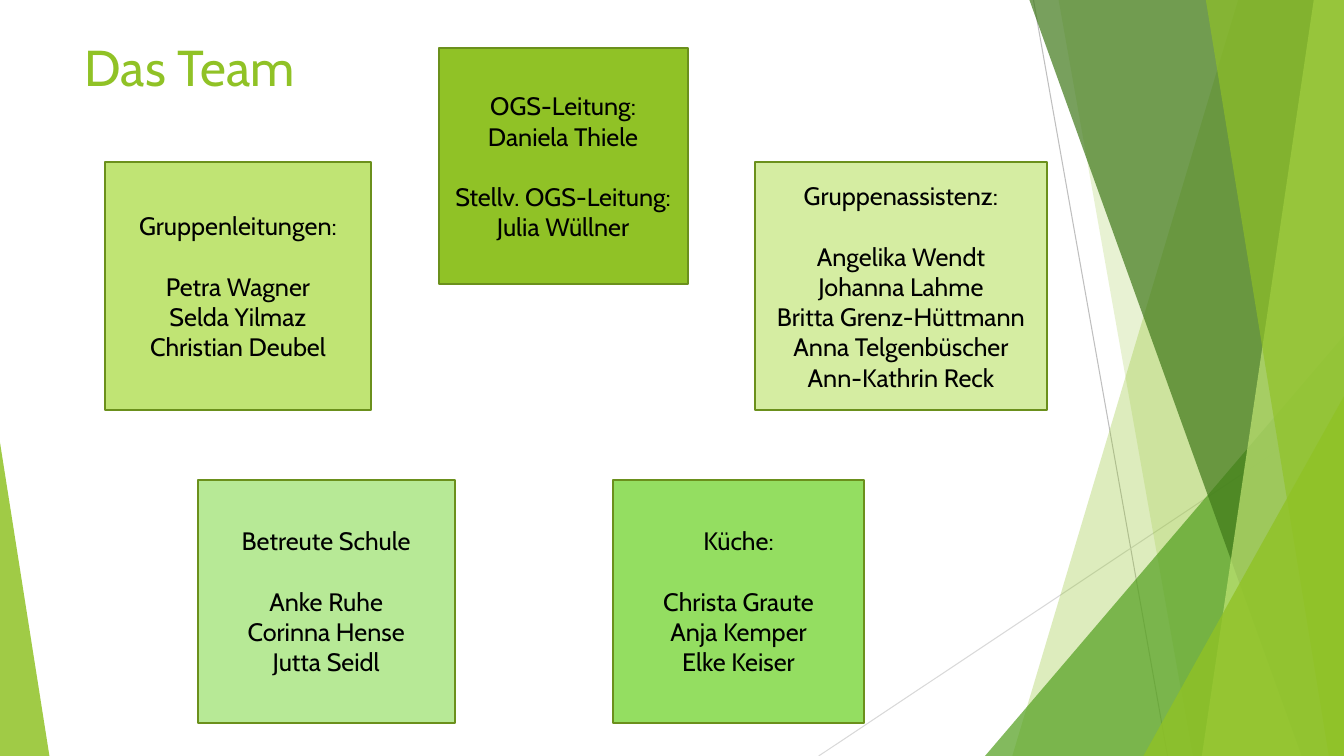
from lxml.etree import SubElement
from pptx import Presentation
from pptx.dml.color import RGBColor
from pptx.enum.shapes import MSO_CONNECTOR, MSO_SHAPE
from pptx.enum.text import MSO_ANCHOR, PP_ALIGN
from pptx.oxml.ns import qn
from pptx.util import Inches, Pt

WIDTH, HEIGHT = 13.33, 7.5
FONT = "Cabin"
BLACK = RGBColor(0x00, 0x00, 0x00)
LIME = RGBColor(0x90, 0xC2, 0x26)
LIGHT_LIME = RGBColor(0xC0, 0xE4, 0x74)
PALE_LIME = RGBColor(0xD5, 0xED, 0xA2)
MINT = RGBColor(0xB7, 0xE9, 0x96)
FRESH_GREEN = RGBColor(0x94, 0xDE, 0x61)
GREEN = RGBColor(0x54, 0xA0, 0x21)
DARK_GREEN = RGBColor(0x3F, 0x78, 0x19)
BORDER = RGBColor(0x6B, 0x90, 0x1C)
GREY = RGBColor(0xBF, 0xBF, 0xBF)
LIGHT_GREY = RGBColor(0xD9, 0xD9, 0xD9)

# Each team: left, top, width, height, fill, paragraph groups
TEAMS = [
    (4.35, 0.48, 2.47, 2.34, LIME,
     [["OGS-Leitung: Daniela Thiele"], ["Stellv. OGS-Leitung:", "Julia Wüllner"]]),
    (1.04, 1.61, 2.64, 2.46, LIGHT_LIME,
     [["Gruppenleitungen:"], ["Petra Wagner", "Selda Yilmaz", "Christian Deubel"]]),
    (7.49, 1.61, 2.89, 2.46, PALE_LIME,
     [["Gruppenassistenz:"],
      ["Angelika Wendt", "Johanna Lahme", "Britta Grenz-Hüttmann",
       "Anna Telgenbüscher", "Ann-Kathrin Reck"]]),
    (1.96, 4.76, 2.55, 2.41, MINT,
     [["Betreute Schule"], ["Anke Ruhe", "Corinna Hense", "Jutta Seidl"]]),
    (6.08, 4.76, 2.49, 2.41, FRESH_GREEN,
     [["Küche:"], ["Christa Graute", "Anja Kemper", "Elke Keiser"]]),
]


def paint(shape, color, opacity=100):
    shape.shadow.inherit = False
    shape.fill.solid()
    shape.fill.fore_color.rgb = color
    if opacity < 100:
        color_element = shape.fill._xPr.find(qn("a:solidFill"))[0]
        SubElement(color_element, qn("a:alpha")).set("val", str(opacity * 1000))


def add_ray(page, start, end, color):
    ray = page.shapes.add_connector(
        MSO_CONNECTOR.STRAIGHT, *(Inches(value) for value in start + end))
    ray.line.color.rgb = color
    ray.line.width = Pt(0.75)
    SubElement(ray._element.spPr, qn("a:effectLst"))


def add_shard(page, top_left, bottom_left, color, opacity):
    """Draw a full-height facet reaching to the right edge of the slide."""
    builder = page.shapes.build_freeform(Inches(top_left), 0)
    corners = [(WIDTH, 0), (WIDTH, HEIGHT), (bottom_left, HEIGHT)]
    builder.add_line_segments([(Inches(x), Inches(y)) for x, y in corners])
    shard = builder.convert_to_shape()
    paint(shard, color, opacity)
    shard.line.fill.background()


def add_corner(page, left, top, width, apex, color, opacity):
    """Draw a triangle on the bottom edge; apex is 0 for left, 1 for right."""
    corner = page.shapes.add_shape(
        MSO_SHAPE.ISOSCELES_TRIANGLE, Inches(left), Inches(top),
        Inches(width), Inches(HEIGHT - top))
    corner.adjustments[0] = apex
    paint(corner, color, opacity)
    corner.line.fill.background()


def add_backdrop(page):
    add_ray(page, (10.25, 0), (11.58, HEIGHT), GREY)
    add_ray(page, (WIDTH, 4.03), (8.12, HEIGHT), LIGHT_GREY)
    add_shard(page, 12.28, 10.04, LIME, 30)
    add_shard(page, 10.5, 11.83, LIME, 20)
    add_corner(page, 9.77, 3.33, 3.56, 1, GREEN, 72)
    add_shard(page, 10.21, 12.91, DARK_GREEN, 70)
    add_shard(page, 13.03, 11.92, LIGHT_LIME, 70)
    add_shard(page, 11.96, 13.18, LIME, 65)
    add_corner(page, 11.34, 3.93, 1.99, 1, LIME, 80)
    add_corner(page, 0, 4.39, 0.49, 0, LIME, 85)


def set_title(page, text, left, top, width, height):
    title = page.shapes.title
    title.left, title.top = Inches(left), Inches(top)
    title.width, title.height = Inches(width), Inches(height)
    title.text_frame.text = text
    title.text_frame.vertical_anchor = MSO_ANCHOR.TOP
    para = title.text_frame.paragraphs[0]
    para.alignment = PP_ALIGN.LEFT
    para.font.name, para.font.size = FONT, Pt(36)
    para.font.color.rgb = LIME


def add_team(page, left, top, width, height, color, groups):
    box = page.shapes.add_shape(
        MSO_SHAPE.RECTANGLE, Inches(left), Inches(top), Inches(width), Inches(height))
    paint(box, color)
    box.line.color.rgb = BORDER
    box.line.width = Pt(1.5)
    frame = box.text_frame
    frame.word_wrap = True
    frame.vertical_anchor = MSO_ANCHOR.MIDDLE
    frame.text = "\n".join(line for group in groups for line in group)
    for para in frame.paragraphs:
        para.alignment = PP_ALIGN.CENTER
        para.font.name, para.font.size = FONT, Pt(18)
        para.font.color.rgb = BLACK
    # One line of space sets the second group apart from the first
    frame.paragraphs[len(groups[0])].space_before = Pt(21.6)


def main():
    deck = Presentation()
    deck.slide_width, deck.slide_height = Inches(WIDTH), Inches(HEIGHT)
    page = deck.slides.add_slide(deck.slide_layouts[5])
    add_backdrop(page)
    set_title(page, "Das Team", 0.74, 0.31, 4.35, 0.82)
    for team in TEAMS:
        add_team(page, *team)
    deck.save("out.pptx")


if __name__ == "__main__":
    main()
